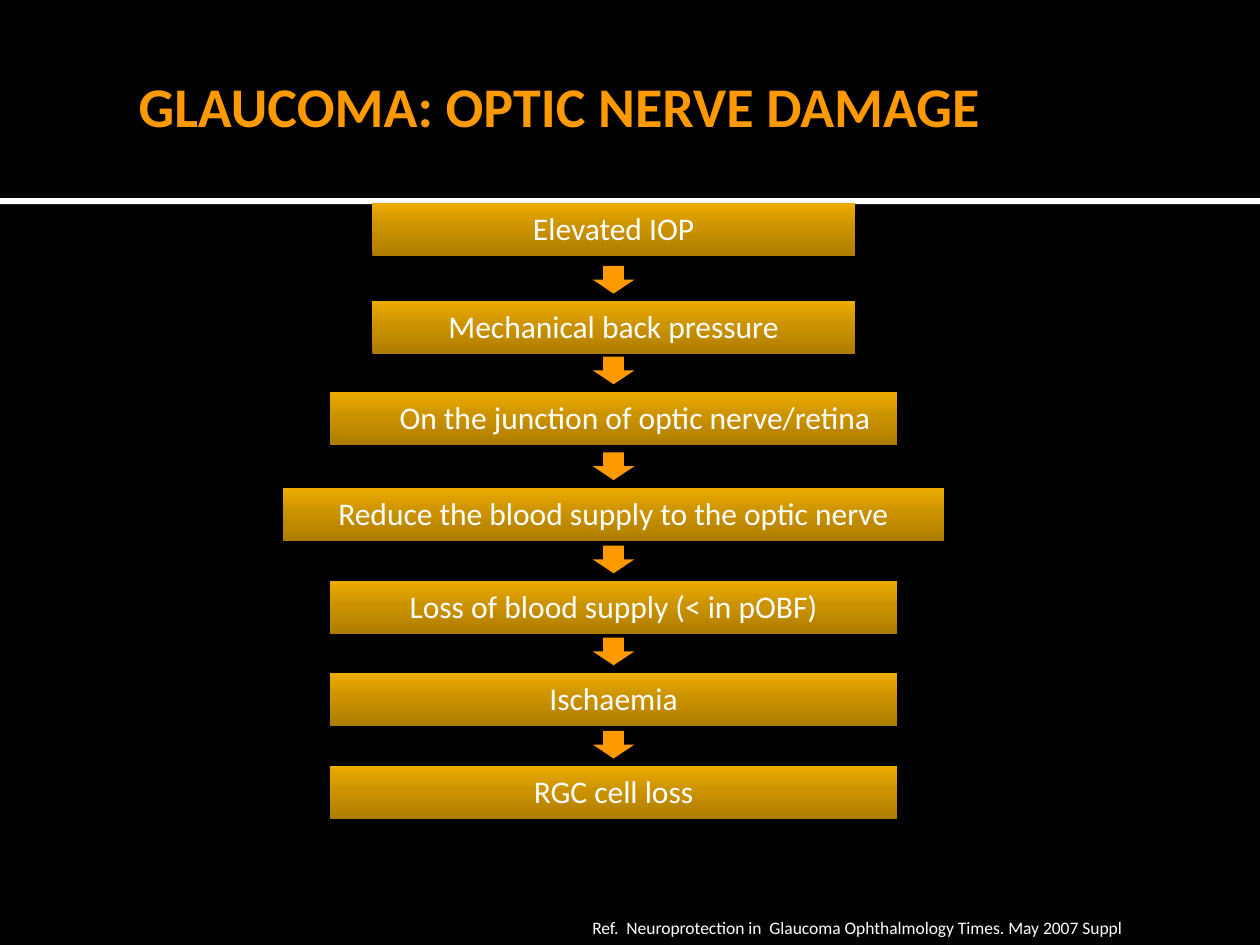
from copy import deepcopy
from dataclasses import dataclass

from pptx import Presentation
from pptx.dml.color import RGBColor
from pptx.enum.shapes import MSO_SHAPE
from pptx.enum.text import MSO_ANCHOR, PP_ALIGN
from pptx.oxml.ns import qn
from pptx.util import Inches, Pt


@dataclass(frozen=True)
class Theme:
    font: str = "Calibri"
    black: str = "000000"
    white: str = "FFFFFF"
    accent: str = "FF9900"
    bar_stops: tuple = ((0, "AE7D00"), (0.55, "CC9300"), (1, "EEAB00"))
    title_size: int = 32
    step_size: int = 18
    ref_size: int = 10


THEME = Theme()
W, H = 10, 7.5
BAR_H, LABEL_H = 0.42, 0.4
ARROW_W, ARROW_H, ARROW_RISE = 0.33, 0.22, 0.28

# Text, top, bar width, label width, label shift from the flow's axis
STEPS = [
    ("Elevated IOP", 1.61, 3.83, 4.25, 0),
    ("Mechanical back pressure", 2.39, 3.83, 4.25, 0),
    ("On the junction of optic nerve/retina", 3.11, 4.5, 5.42, 0.17),
    ("Reduce the blood supply to the optic nerve", 3.87, 5.25, 5.17, 0),
    ("Loss of blood supply (< in pOBF)", 4.61, 4.5, 4.25, 0),
    ("Ischaemia", 5.34, 4.5, 4.25, 0),
    ("RGC cell loss", 6.08, 4.5, 4.25, 0),
]


def rgb(value):
    return RGBColor.from_string(value)


def inches(*box):
    return [Inches(v) for v in box]


def add_block(s, kind, box, color):
    sp = s.shapes.add_shape(kind, *inches(*box))
    sp.shadow.inherit = False
    sp.line.fill.background()
    sp.fill.solid()
    sp.fill.fore_color.rgb = rgb(color)
    return sp


def write(tf, text, size, color, align, bold=False):
    tf.word_wrap = True
    tf.text = text
    p = tf.paragraphs[0]
    p.alignment = align
    font = p.runs[0].font
    font.name, font.size, font.bold = THEME.font, Pt(size), bold
    font.color.rgb = rgb(color)


def add_label(s, box, text, size, align):
    tf = s.shapes.add_textbox(*inches(*box)).text_frame
    write(tf, text, size, THEME.white, align)


def shade_bar(sp):
    sp.fill.gradient()
    stops = sp._element.spPr.find(qn("a:gradFill")).find(qn("a:gsLst"))
    stops.append(deepcopy(stops[-1]))
    for stop, (position, color) in zip(sp.fill.gradient_stops, THEME.bar_stops):
        stop.position = position
        stop.color.rgb = rgb(color)
    sp.fill.gradient_angle = 90


def build_header(s, x, y, w, h):
    # White rule under a black band
    add_block(s, MSO_SHAPE.RECTANGLE, (x, y + h, w, 0.05), THEME.white)
    add_block(s, MSO_SHAPE.RECTANGLE, (x, y, w, h), THEME.black)

    # Title, brought in front of the band
    title = s.shapes.title
    title.left, title.top, title.width, title.height = inches(
        x + 0.1 * w, y + 0.42, 7.67, 0.83)
    s.shapes._spTree.append(title._element)
    tf = title.text_frame
    tf.vertical_anchor = MSO_ANCHOR.MIDDLE
    tf.margin_left = Inches(0.1)
    tf.margin_top = tf.margin_right = tf.margin_bottom = Inches(0.05)
    write(tf, "GLAUCOMA: OPTIC NERVE DAMAGE", THEME.title_size, THEME.accent,
          PP_ALIGN.LEFT, bold=True)


def build_flow(s, axis, steps):
    # Bars with their labels, centred on the axis
    for text, top, bar_w, label_w, shift in steps:
        bar = add_block(s, MSO_SHAPE.RECTANGLE,
                        (axis - bar_w / 2, top, bar_w, BAR_H), THEME.accent)
        shade_bar(bar)
        add_label(s, (axis + shift - label_w / 2, top, label_w, LABEL_H),
                  text, THEME.step_size, PP_ALIGN.CENTER)

    # An arrow above every bar but the first
    for _, top, *_ in steps[1:]:
        add_block(s, MSO_SHAPE.DOWN_ARROW,
                  (axis - ARROW_W / 2, top - ARROW_RISE, ARROW_W, ARROW_H),
                  THEME.accent)


def build_reference(s, x, y, w, h):
    add_label(s, (x, y, w, h),
              "Ref.  Neuroprotection in  Glaucoma Ophthalmology Times. May 2007 Suppl",
              THEME.ref_size, PP_ALIGN.RIGHT)


def main():
    prs = Presentation()
    prs.slide_width, prs.slide_height = inches(W, H)
    s = prs.slides.add_slide(prs.slide_layouts[5])
    s.background.fill.solid()
    s.background.fill.fore_color.rgb = rgb(THEME.black)

    build_header(s, 0, 0, W, 1.57)
    build_flow(s, 4.87, STEPS)
    build_reference(s, 4.08, H - 0.27, 4.92, 0.27)
    prs.save("out.pptx")


if __name__ == "__main__":
    main()
